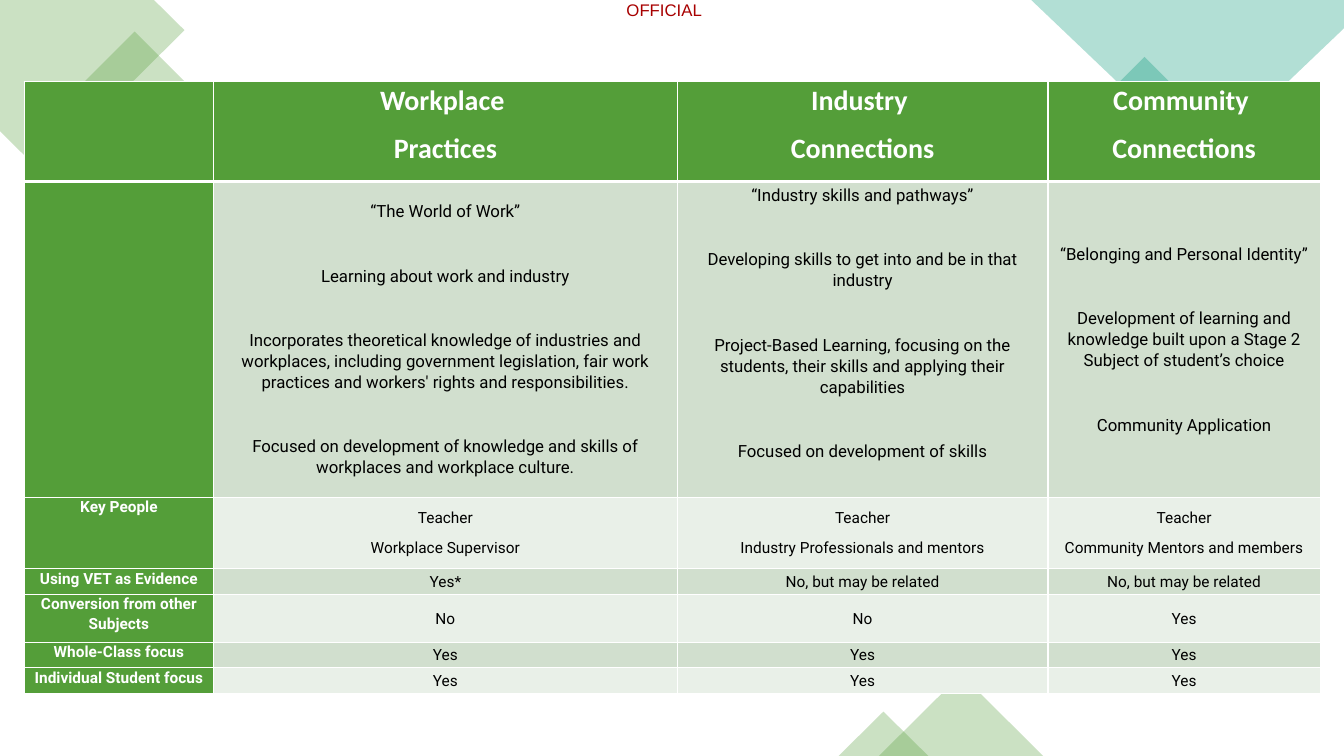
from lxml.etree import SubElement
from pptx import Presentation
from pptx.dml.color import RGBColor
from pptx.enum.shapes import MSO_SHAPE
from pptx.enum.text import MSO_ANCHOR, PP_ALIGN
from pptx.oxml import parse_xml
from pptx.oxml.ns import nsdecls, qn
from pptx.util import Pt

COLOURS = {
    "green": "549E39", "teal": "029676", "band": "D1DFCE", "light": "E9F0E8",
    "white": "FFFFFF", "black": "000000", "red": "A80000",
}

COLUMN_WIDTHS = [135.4, 331, 265, 194.4]
ROW_HEIGHTS = [71.3, 225.5, 51, 18.4, 34.2, 18.4, 18.4]

HEADINGS = [
    [],
    ["Workplace ", "Practices"],
    ["Industry ", "Connections"],
    ["Community ", "Connections"],
]
DESCRIPTIONS = [
    [],
    ["“The World of Work”",
     "Learning about work and industry",
     "Incorporates theoretical knowledge of industries and workplaces, including "
     "government legislation, fair work practices and workers' rights and responsibilities.",
     "Focused on development of knowledge and skills of workplaces and workplace culture."],
    ["“Industry skills and pathways”",
     "Developing skills to get into and be in that industry",
     "Project-Based Learning, focusing on the students, their skills and applying "
     "their capabilities",
     "Focused on development of skills"],
    ["“Belonging and Personal Identity”",
     "Development of learning and knowledge built upon a Stage 2 Subject of student’s choice",
     "Community Application"],
]
FEATURES = [
    [["Key People"], ["Teacher", "Workplace Supervisor"],
     ["Teacher", "Industry Professionals and mentors"],
     ["Teacher", "Community Mentors and members"]],
    [["Using VET as Evidence"], ["Yes*"], ["No, but may be related"], ["No, but may be related"]],
    [["Conversion from other Subjects"], ["No"], ["No"], ["Yes"]],
    [["Whole-Class focus"], ["Yes"], ["Yes"], ["Yes"]],
    [["Individual Student focus"], ["Yes"], ["Yes"], ["Yes"]],
]


def rgb(name):
    return RGBColor.from_string(COLOURS[name])


def style_decoration(shape, colour):
    """Flat fill at 30% opacity, without outline or shadow."""
    shape.shadow.inherit = False
    shape.line.fill.background()
    shape.fill.solid()
    shape.fill.fore_color.rgb = rgb(colour)
    colour_element = shape.fill._xPr.find(qn("a:solidFill"))[0]
    SubElement(colour_element, qn("a:alpha"), val="30000")


def add_decoration(slide, kind, colour, left, top, width, height, rotation=0):
    shape = slide.shapes.add_shape(kind, Pt(left), Pt(top), Pt(width), Pt(height))
    shape.rotation = rotation
    style_decoration(shape, colour)


def add_polygon(slide, colour, points):
    start, *others = [(Pt(x), Pt(y)) for x, y in points]
    builder = slide.shapes.build_freeform(*start)
    builder.add_line_segments(others, close=True)
    style_decoration(builder.convert_to_shape(), colour)


def set_font(paragraph, name, size, colour, bold=False):
    paragraph.font.name = name
    paragraph.font.size = Pt(size)
    paragraph.font.bold = bold
    paragraph.font.color.rgb = rgb(colour)


def add_marking(slide, text):
    frame = slide.shapes.add_textbox(Pt(445.7), 0, Pt(57.6), Pt(14.4)).text_frame
    frame.margin_left = frame.margin_right = frame.margin_top = frame.margin_bottom = 0
    frame.word_wrap = True
    paragraph = frame.paragraphs[0]
    paragraph.text = text
    paragraph.alignment = PP_ALIGN.CENTER
    set_font(paragraph, "Arial", 12, "red")


def set_borders(cell, top=1, bottom=1):
    properties = cell._tc.get_or_add_tcPr()
    sides = {"lnL": 1, "lnR": 1, "lnT": top, "lnB": bottom}
    for index, (side, width) in enumerate(sides.items()):
        properties.insert(index, parse_xml(
            f'<a:{side} {nsdecls("a")} w="{Pt(width)}"><a:solidFill>'
            f'<a:srgbClr val="{COLOURS["white"]}"/></a:solidFill></a:{side}>'))


def fill_cell(cell, lines, fill, font, gap=8, anchor=MSO_ANCHOR.MIDDLE):
    cell.fill.solid()
    cell.fill.fore_color.rgb = rgb(fill)
    cell.vertical_anchor = anchor
    cell.margin_left = cell.margin_right = Pt(4.3)
    cell.margin_top = cell.margin_bottom = 0
    for index, line in enumerate(lines):
        frame = cell.text_frame
        paragraph = frame.add_paragraph() if index else frame.paragraphs[0]
        paragraph.text = line
        paragraph.alignment = PP_ALIGN.CENTER
        paragraph.line_spacing = 1.07
        paragraph.space_after = Pt(gap if index < len(lines) - 1 else 8)
        set_font(paragraph, *font)


def add_comparison_table(slide):
    rows = [HEADINGS, DESCRIPTIONS, *FEATURES]
    table = slide.shapes.add_table(
        len(rows), len(COLUMN_WIDTHS), Pt(17.3), Pt(58.3),
        Pt(sum(COLUMN_WIDTHS)), Pt(sum(ROW_HEIGHTS))).table
    table.first_row = table.horz_banding = False
    for column, width in zip(table.columns, COLUMN_WIDTHS):
        column.width = Pt(width)

    for row_index, row in enumerate(rows):
        table.rows[row_index].height = Pt(ROW_HEIGHTS[row_index])
        band = "band" if row_index % 2 else "light"
        size, gap = (12, 31) if row_index == 1 else (11, 8)
        for column_index, lines in enumerate(row):
            cell = table.cell(row_index, column_index)
            if row_index == 0:
                fill_cell(cell, lines, "green", ("Calibri", 20, "white", True),
                          anchor=MSO_ANCHOR.TOP)
            elif column_index == 0:
                fill_cell(cell, lines, "green", ("Roboto", 11, "white", True),
                          anchor=MSO_ANCHOR.TOP)
            else:
                fill_cell(cell, lines, band, ("Roboto", size, "black"), gap)
            set_borders(cell, top=3 if row_index == 1 else 1,
                        bottom=3 if row_index == 0 else 1)
    # The industry description sits above the middle of its row
    table.cell(1, 2).margin_bottom = Pt(23)


def main():
    presentation = Presentation()
    presentation.slide_width, presentation.slide_height = Pt(960), Pt(540)
    slide = presentation.slides.add_slide(presentation.slide_layouts[6])

    # Security marking
    add_marking(slide, "OFFICIAL")

    # Corner decorations
    add_polygon(slide, "green", [(110, 0), (0, 0), (0, 93.6), (29.5, 123), (131.8, 21.6)])
    add_decoration(slide, MSO_SHAPE.RECTANGLE, "green", 70.6, 33.1, 51.1, 51.1, 315)
    add_decoration(slide, MSO_SHAPE.RECTANGLE, "teal", 790.6, 51.8, 54, 54, 315)
    add_polygon(slide, "teal", [(960, 0), (736.6, 0), (859, 116.6), (960, 20.2)])
    add_decoration(slide, MSO_SHAPE.ISOSCELES_TRIANGLE, "green", 627.8, 481.7, 117.4, 58.3)
    add_decoration(slide, MSO_SHAPE.ISOSCELES_TRIANGLE, "green", 599, 508.3, 64.1, 31.7)

    # Subject comparison
    add_comparison_table(slide)
    presentation.save("out.pptx")


if __name__ == "__main__":
    main()
